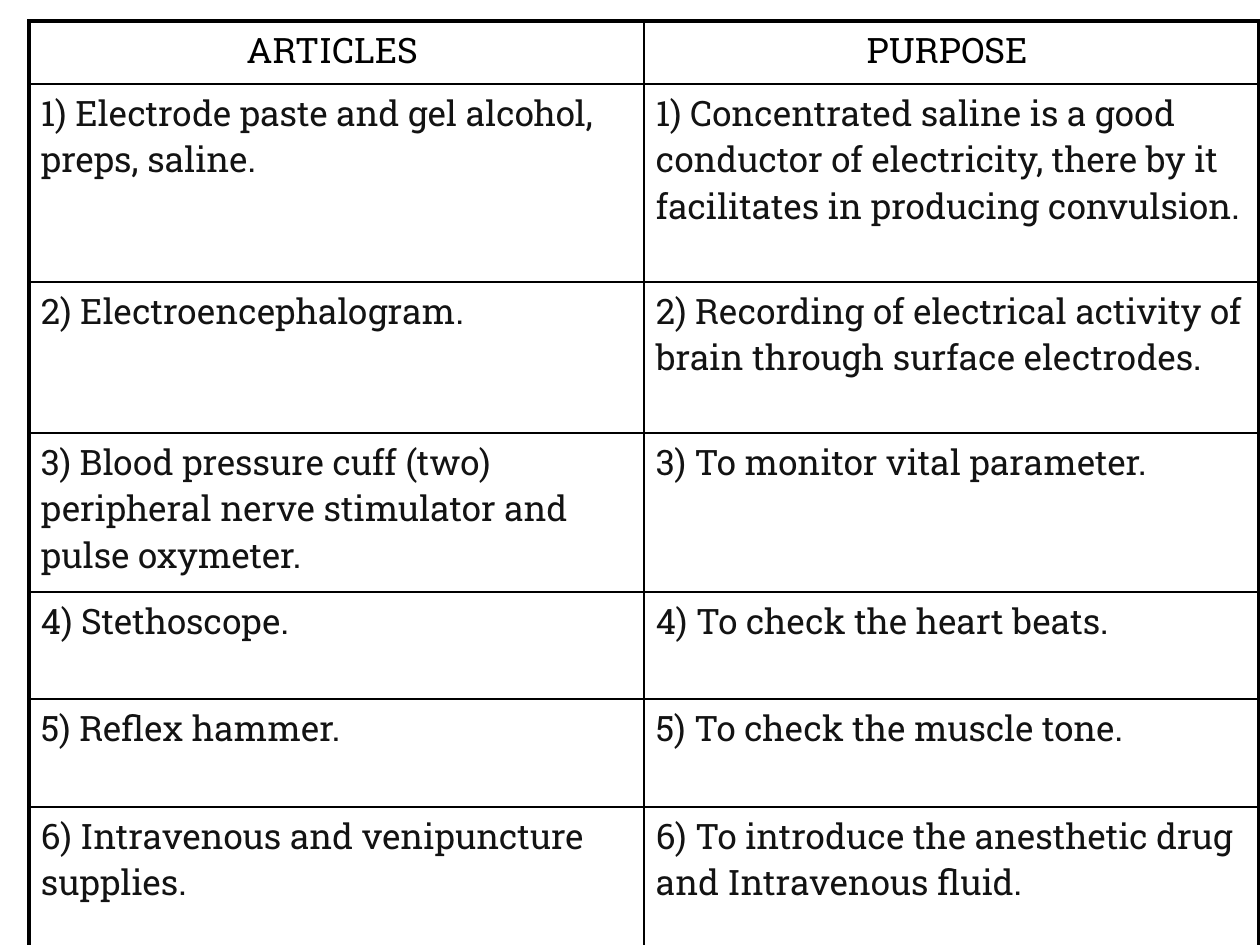
from lxml import etree
from pptx import Presentation
from pptx.dml.color import RGBColor
from pptx.enum.text import PP_ALIGN
from pptx.oxml.ns import qn
from pptx.util import Emu, Pt

CENTER, LEFT = PP_ALIGN.CENTER, PP_ALIGN.LEFT
PX = 914400 / 126
FONT = "Roboto Slab"
BLACK, INK = "000000", "131313"
THIN, THICK = 1, 2.25
ROW_HEIGHTS = [63, 198, 151, 159, 107, 108, 150]
ARTICLES = [
    ("ARTICLES ", "PURPOSE "),
    ("1) Electrode paste and gel alcohol, preps, saline.",
     "1) Concentrated saline is a good conductor of electricity, there by it "
     "facilitates in producing convulsion."),
    ("2) Electroencephalogram.",
     "2) Recording of electrical activity of brain through surface electrodes."),
    ("3) Blood pressure cuff (two) peripheral nerve stimulator and pulse oxymeter.",
     "3) To monitor vital parameter."),
    ("4) Stethoscope.", "4) To check the heart beats."),
    ("5) Reflex hammer.", "5) To check the muscle tone."),
    ("6) Intravenous and venipuncture supplies.",
     "6) To introduce the anesthetic drug and Intravenous fluid."),
]


def px(length):
    """Turn whole pixels into EMU."""
    return Emu(round(length * PX))


def color(hex_code):
    """Turn a hex string into a colour."""
    return RGBColor.from_string(hex_code)


def write(frame, text, size=20, ink=INK, align=LEFT):
    """Put one formatted paragraph into a text frame."""
    paragraph = frame.paragraphs[0]
    paragraph.alignment = align
    run = paragraph.add_run()
    run.text = text
    run.font.name = FONT
    run.font.size = Pt(size)
    run.font.color.rgb = color(ink)


def set_borders(cell, widths):
    """Draw the left, right, top and bottom borders in points."""
    properties = cell._tc.get_or_add_tcPr()
    for position, (side, width) in enumerate(zip("LRTB", widths)):
        line = etree.Element(qn(f"a:ln{side}"), w=str(Pt(width)))
        fill = etree.SubElement(line, qn("a:solidFill"))
        etree.SubElement(fill, qn("a:srgbClr"), val=BLACK)
        properties.insert(position, line)


def add_articles_table(slide, left, top, width):
    """Place the table of articles and purposes with a thick outer frame."""
    row_count, column_count = len(ARTICLES), len(ARTICLES[0])
    table = slide.shapes.add_table(
        row_count, column_count, px(left), px(top), px(width), px(sum(ROW_HEIGHTS))).table
    table.first_row = table.horz_banding = False
    for row, height in zip(table.rows, ROW_HEIGHTS):
        row.height = px(height)
    for column in table.columns:
        column.width = px(width // column_count)
    for r, entries in enumerate(ARTICLES):
        for c, entry in enumerate(entries):
            cell = table.cell(r, c)
            cell.margin_left = cell.margin_right = px(12)
            cell.margin_top = cell.margin_bottom = px(6)
            cell.fill.background()
            outer = (c == 0, c == column_count - 1, r == 0, r == row_count - 1)
            set_borders(cell, [THICK if edge else THIN for edge in outer])
            header = r == 0
            write(cell.text_frame, entry, ink=BLACK if header else INK,
                  align=CENTER if header else LEFT)


def main():
    """Build the slide and save it."""
    deck = Presentation()
    deck.slide_width, deck.slide_height = px(1260), px(945)
    slide = deck.slides.add_slide(deck.slide_layouts[6])
    add_articles_table(slide, 29, 21, 1230)
    deck.save("out.pptx")


if __name__ == "__main__":
    main()
